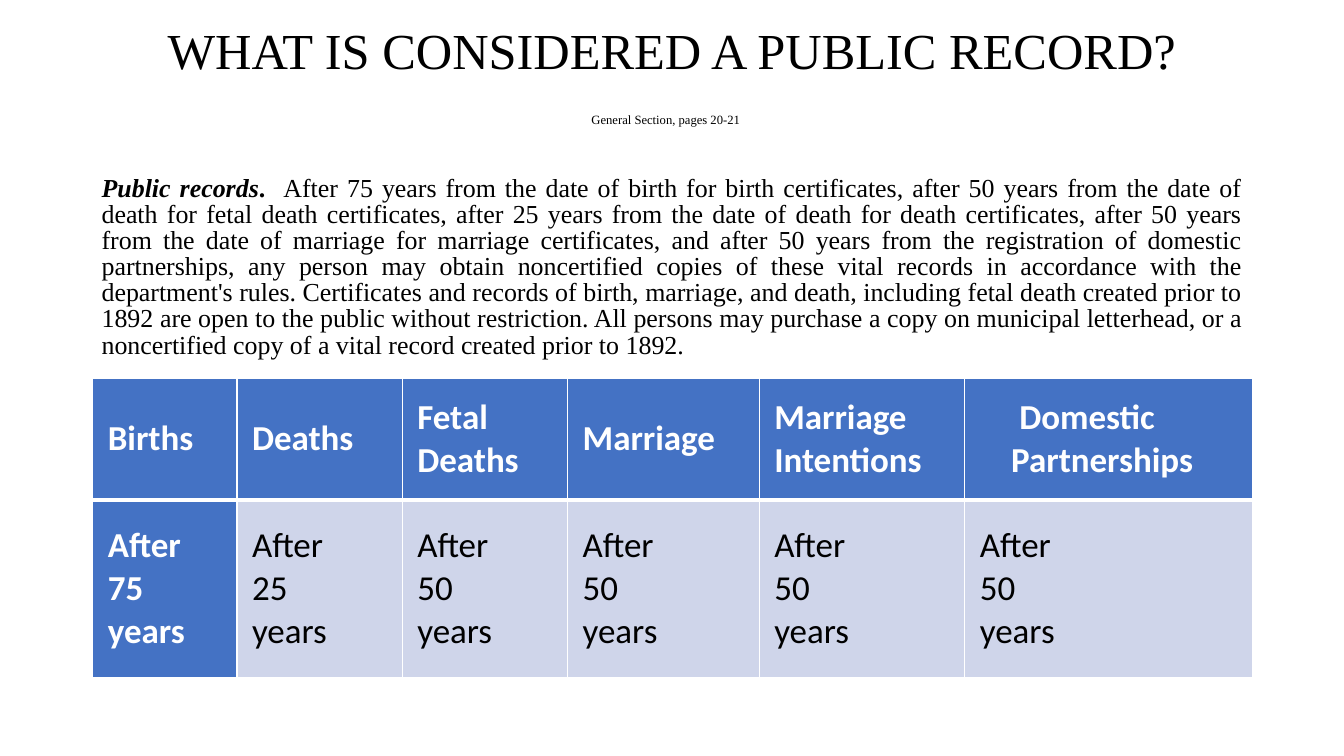
from lxml import etree
from pptx import Presentation
from pptx import util as u
from pptx.dml.color import RGBColor
from pptx.enum import text
from pptx.oxml.ns import qn

SERIF, SANS = "Times New Roman", "Calibri"
BLACK, WHITE, BLUE, PALE = "000000", "FFFFFF", "4472C4", "CFD5EA"
COLUMN_WIDTHS = [1.43, 1.64, 1.64, 1.9, 2.04, 2.85]
ROW_HEIGHTS = [1.21, 1.76]
RECORDS = [
    (["Births"], 75),
    (["Deaths"], 25),
    (["Fetal", "Deaths"], 50),
    (["Marriage"], 50),
    (["Marriage", "Intentions"], 50),
    (["Domestic", "Partnerships"], 50),
]
PARTNERSHIP_INDENTS = [0.39, 0.31]
RULE = (
    "After 75 years from the date of birth for birth certificates, after 50 years "
    "from the date of death for fetal death certificates, after 25 years from the "
    "date of death for death certificates, after 50 years from the date of marriage "
    "for marriage certificates, and after 50 years from the registration of domestic "
    "partnerships, any person may obtain noncertified copies of these vital records "
    "in accordance with the department's rules. Certificates and records of birth, "
    "marriage, and death, including fetal death created prior to 1892 are open to the "
    "public without restriction. All persons may purchase a copy on municipal "
    "letterhead, or a noncertified copy of a vital record created prior to 1892."
)


def colour(value):
    """Turn a hex string into a colour."""
    return RGBColor.from_string(value)


def add_span(para, words, size, font=SERIF, ink=BLACK, bold=False, italic=False):
    """Add one formatted run to a paragraph."""
    span = para.add_run()
    span.text = words
    span.font.size, span.font.name = u.Pt(size), font
    span.font.bold, span.font.italic = bold, italic
    span.font.color.rgb = colour(ink)


def place(shape, left, top, width, height):
    """Set the position and size of a shape."""
    shape.left, shape.top = u.Inches(left), u.Inches(top)
    shape.width, shape.height = u.Inches(width), u.Inches(height)


def fill_title(title):
    """Write the heading and its page reference in the title placeholder."""
    place(title, 1.1, 0.19, 11.13, 1.22)
    frame = title.text_frame
    frame.auto_size = text.MSO_AUTO_SIZE.NONE
    frame.vertical_anchor = text.MSO_ANCHOR.MIDDLE
    para = frame.paragraphs[0]
    para.alignment, para.line_spacing = text.PP_ALIGN.CENTER, 0.9
    add_span(para, "WHAT IS CONSIDERED A PUBLIC RECORD?", 36)
    para.add_line_break()
    etree.SubElement(para._p.find(qn("a:br")), qn("a:rPr"), sz="3600")
    add_span(para, "General Section, pages 20-21", 9)
    add_span(para, " ", 36)


def add_rule_text(page):
    """Add the justified paragraph that explains the rule."""
    box = page.shapes.add_textbox(
        u.Inches(0.91), u.Inches(1.7), u.Inches(11.5), u.Inches(1.95))
    box.text_frame.word_wrap = True
    para = box.text_frame.paragraphs[0]
    para.alignment, para.line_spacing = text.PP_ALIGN.JUSTIFY, 0.84
    add_span(para, "Public records", 18.5, bold=True, italic=True)
    add_span(para, ".  ", 18.5, bold=True)
    add_span(para, RULE, 18.5)


def set_borders(cell, top, bottom):
    """Give a cell white borders with the given top and bottom widths."""
    properties = cell._tc.get_or_add_tcPr()
    for side, width in (("L", 1), ("R", 1), ("T", top), ("B", bottom)):
        line = etree.SubElement(properties, qn(f"a:ln{side}"), w=str(u.Pt(width)))
        fill = etree.SubElement(line, qn("a:solidFill"))
        etree.SubElement(fill, qn("a:srgbClr"), val=WHITE)


def fill_cell(cell, lines, background, ink, bold, indents=None):
    """Write one paragraph per line in a cell and colour it."""
    cell.fill.solid()
    cell.fill.fore_color.rgb = colour(background)
    cell.vertical_anchor = text.MSO_ANCHOR.MIDDLE
    cell.margin_left = cell.margin_right = u.Inches(0.15)
    cell.margin_top = cell.margin_bottom = 0
    frame = cell.text_frame
    for index, words in enumerate(lines):
        para = frame.add_paragraph() if index else frame.paragraphs[0]
        para.alignment = text.PP_ALIGN.JUSTIFY
        if indents:
            para._p.get_or_add_pPr().set("marL", str(u.Inches(indents[index])))
        add_span(para, words, 25, SANS, ink, bold)


def add_records_table(page):
    """Add the table of record types and waiting periods."""
    table = page.shapes.add_table(
        len(ROW_HEIGHTS), len(RECORDS), u.Inches(0.92), u.Inches(3.75),
        u.Inches(sum(COLUMN_WIDTHS)), u.Inches(sum(ROW_HEIGHTS))).table
    table.first_col, table.horz_banding = True, False
    for column, width in zip(table.columns, COLUMN_WIDTHS):
        column.width = u.Inches(width)
    for row, height in zip(table.rows, ROW_HEIGHTS):
        row.height = u.Inches(height)
    for index, (heading, years) in enumerate(RECORDS):
        header, period = table.cell(0, index), table.cell(1, index)
        set_borders(header, 1, 3)
        set_borders(period, 3, 1)
        indents = PARTNERSHIP_INDENTS if heading[0] == "Domestic" else None
        fill_cell(header, heading, BLUE, WHITE, True, indents)
        first = index == 0
        fill_cell(period, ["After", str(years), "years"],
                  BLUE if first else PALE, WHITE if first else BLACK, first)


def main():
    """Build the slide and save it."""
    deck = Presentation()
    deck.slide_width, deck.slide_height = u.Inches(13.33), u.Inches(7.5)
    page = deck.slides.add_slide(deck.slide_layouts[5])
    fill_title(page.shapes.title)
    add_rule_text(page)
    add_records_table(page)
    deck.save("out.pptx")


if __name__ == "__main__":
    main()
